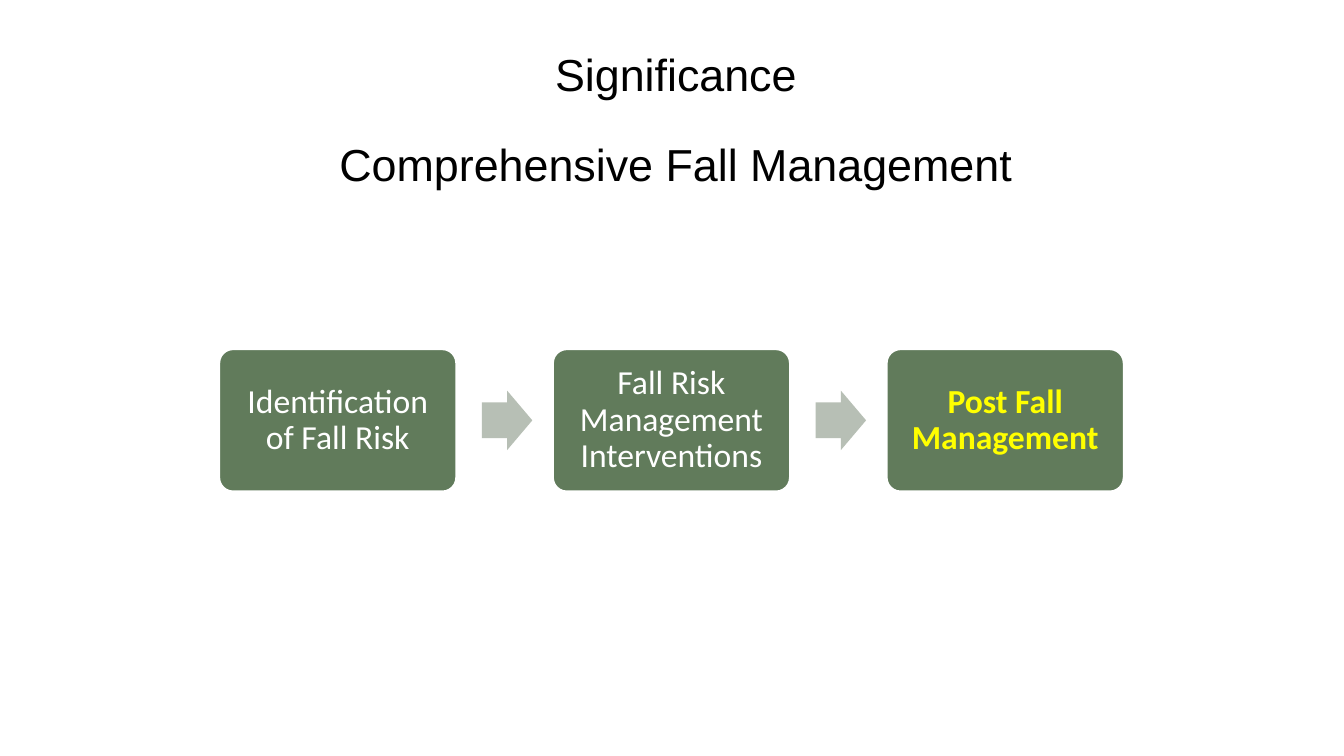
import pptx
import pptx.util
import pptx.dml.color
import pptx.enum.shapes
import pptx.enum.text
from dataclasses import dataclass

Inches = pptx.util.Inches
Pt = pptx.util.Pt
Color = pptx.dml.color.RGBColor.from_string
Shape = pptx.enum.shapes.MSO_SHAPE
Anchor = pptx.enum.text.MSO_ANCHOR


@dataclass(frozen=True)
class Theme:
    heading_font: str = "Arial"
    step_font: str = "Calibri"
    heading_size: int = 32
    step_size: int = 24
    heading: str = "000000"
    step_fill: str = "617B5B"
    step_text: str = "FFFFFF"
    highlight: str = "FFFF00"
    outline: str = "FFFFFF"
    arrow: str = "B7BFB5"


THEME = Theme()
STEPS = [
    ("Identification of Fall Risk", False),
    ("Fall Risk Management Interventions", False),
    ("Post Fall Management", True),
]
STEP_LEFT, STEP_WIDTH, STEP_HEIGHT, STEP_PITCH = 2.17, 2.36, 1.42, 3.31
ARROW_OFFSET, ARROW_WIDTH, ARROW_HEIGHT = 2.61, 0.5, 0.59
FLOW_MIDDLE = 4.17


def write_text(box, text, font, size, color, anchor, bold=False):
    frame = box.text_frame
    frame.word_wrap = True
    frame.vertical_anchor = anchor
    para = frame.paragraphs[0]
    para.text = text
    para.alignment = pptx.enum.text.PP_ALIGN.CENTER
    para.font.name = font
    para.font.size = Pt(size)
    para.font.bold = bold
    para.font.color.rgb = Color(color)
    return frame


def add_heading(page, text, top, height, anchor):
    box = page.shapes.add_textbox(Inches(0.67), Inches(top), Inches(12.07), Inches(height))
    write_text(box, text, THEME.heading_font, THEME.heading_size, THEME.heading, anchor)


def add_flow_shape(page, kind, left, width, height, fill, adjustments):
    shape = page.shapes.add_shape(
        kind, Inches(left), Inches(FLOW_MIDDLE - height / 2), Inches(width), Inches(height))
    shape.shadow.inherit = False
    shape.fill.solid()
    shape.fill.fore_color.rgb = Color(fill)
    for index, value in enumerate(adjustments):
        shape.adjustments[index] = value
    return shape


def add_step(page, left, text, highlighted):
    step = add_flow_shape(page, Shape.ROUNDED_RECTANGLE, left, STEP_WIDTH, STEP_HEIGHT,
                          THEME.step_fill, [0.1])
    step.line.color.rgb = Color(THEME.outline)
    step.line.width = Pt(2)
    color = THEME.highlight if highlighted else THEME.step_text
    frame = write_text(step, text, THEME.step_font, THEME.step_size, color,
                       Anchor.MIDDLE, highlighted)
    frame.paragraphs[0].line_spacing = 0.9
    frame.margin_left = frame.margin_right = Inches(0.1)
    frame.margin_top = frame.margin_bottom = Inches(0.1)


def add_arrow(page, left):
    arrow = add_flow_shape(page, Shape.RIGHT_ARROW, left, ARROW_WIDTH, ARROW_HEIGHT,
                           THEME.arrow, [0.6, 0.5])
    arrow.line.fill.background()


def main():
    deck = pptx.Presentation()
    deck.slide_width = Inches(13.33)
    deck.slide_height = Inches(7.5)
    page = deck.slides.add_slide(deck.slide_layouts[6])
    add_heading(page, "Significance", 0.31, 0.85, Anchor.MIDDLE)
    add_heading(page, "Comprehensive Fall Management", 1.31, 1.03, Anchor.TOP)
    for index, (text, highlighted) in enumerate(STEPS):
        left = STEP_LEFT + index * STEP_PITCH
        add_step(page, left, text, highlighted)
        if index < len(STEPS) - 1:
            add_arrow(page, left + ARROW_OFFSET)
    deck.save("out.pptx")


if __name__ == "__main__":
    main()
